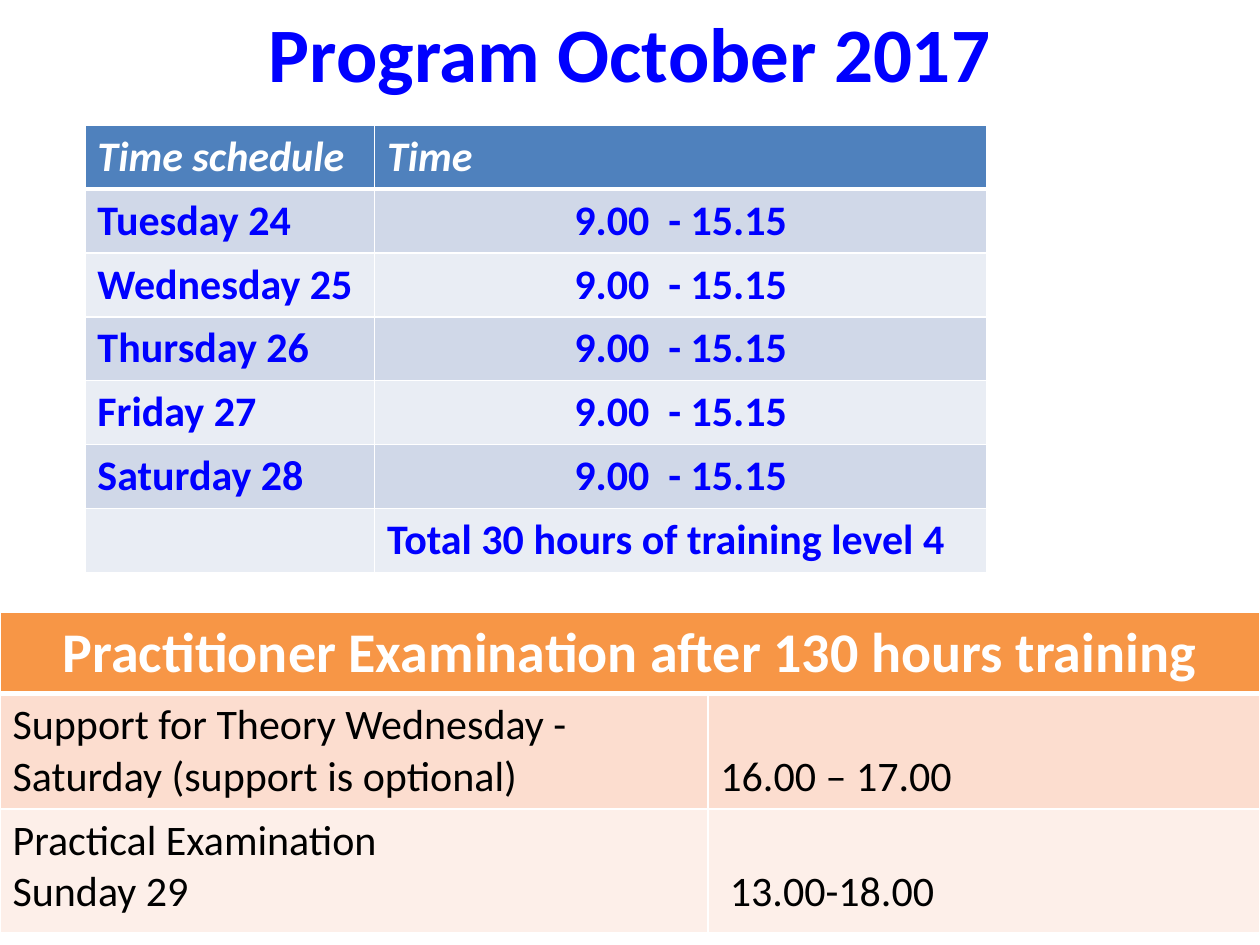
import pptx
import pptx.dml.color
import pptx.enum.text
import pptx.oxml
import pptx.oxml.ns
import pptx.util
from dataclasses import dataclass

Pt = pptx.util.Pt
ALIGN = pptx.enum.text.PP_ALIGN
ANCHOR = pptx.enum.text.MSO_ANCHOR


@dataclass(frozen=True)
class Theme:
    font: str = "Calibri"
    title_size: int = 44
    banner_size: int = 32
    body_size: int = 24
    blue: str = "0000FF"
    white: str = "FFFFFF"
    black: str = "000000"
    schedule_header: str = "4F81BD"
    schedule_bands: tuple = ("D0D8E8", "E9EDF4")
    exam_header: str = "F79646"
    exam_bands: tuple = ("FCDDCF", "FDEFE9")
    grid_width: int = 1
    header_rule: int = 3


THEME = Theme()


def rgb(color):
    return pptx.dml.color.RGBColor.from_string(color)


def write_text(frame, text, size=THEME.body_size, color=THEME.black,
               bold=False, italic=False, align=ALIGN.LEFT):
    """Write text, one paragraph per line, in a single format."""
    frame.text = text
    for paragraph in frame.paragraphs:
        paragraph.alignment = align
        for run in paragraph.runs:
            font = run.font
            font.name, font.size = THEME.font, Pt(size)
            font.bold, font.italic = bold, italic
            font.color.rgb = rgb(color)


def set_borders(cell, top, bottom):
    """Draw white lines on all four sides of a cell."""
    widths = {"L": THEME.grid_width, "R": THEME.grid_width, "T": top, "B": bottom}
    properties = cell._tc.get_or_add_tcPr()
    for side, width in widths.items():
        properties.append(pptx.oxml.parse_xml(
            f'<a:ln{side} {pptx.oxml.ns.nsdecls("a")} w="{Pt(width)}">'
            f'<a:solidFill><a:srgbClr val="{THEME.white}"/></a:solidFill>'
            f'</a:ln{side}>'))


def add_banded_table(slide, left, top, widths, heights, header_color, bands):
    """Add a table with a header row and alternating row fills."""
    table = slide.shapes.add_table(
        len(heights), len(widths), Pt(left), Pt(top),
        Pt(sum(widths)), Pt(sum(heights))).table
    for column, width in zip(table.columns, widths):
        column.width = Pt(width)
    for index, (row, height) in enumerate(zip(table.rows, heights)):
        row.height = Pt(height)
        for cell in row.cells:
            set_borders(cell,
                        top=THEME.header_rule if index == 1 else THEME.grid_width,
                        bottom=THEME.header_rule if index == 0 else THEME.grid_width)
            cell.fill.solid()
            cell.fill.fore_color.rgb = rgb(
                bands[(index - 1) % 2] if index else header_color)
    return table


def add_title(slide, text):
    title = slide.shapes.title
    title.left, title.top, title.width, title.height = Pt(36), Pt(10), Pt(648), Pt(39)
    title.text_frame.vertical_anchor = ANCHOR.MIDDLE
    write_text(title.text_frame, text, size=THEME.title_size,
               color=THEME.blue, bold=True, align=ALIGN.CENTER)


def add_schedule(slide):
    days = ("Tuesday 24", "Wednesday 25", "Thursday 26", "Friday 27", "Saturday 28")
    hours = "9.00  - 15.15"
    table = add_banded_table(slide, 48.5, 71.5, (165.5, 350), (36.5,) * 7,
                             THEME.schedule_header, THEME.schedule_bands)
    for column, heading in enumerate(("Time schedule", "Time")):
        write_text(table.cell(0, column).text_frame, heading,
                   color=THEME.white, bold=True, italic=True)
    for row, day in enumerate(days, start=1):
        write_text(table.cell(row, 0).text_frame, day, color=THEME.blue, bold=True)
        write_text(table.cell(row, 1).text_frame, hours,
                   color=THEME.blue, bold=True, align=ALIGN.CENTER)
    write_text(table.cell(len(days) + 1, 1).text_frame,
               "Total 30 hours of training level 4", color=THEME.blue, bold=True)


def add_examination(slide):
    sessions = (
        ("Support for Theory Wednesday - Saturday (support is optional)",
         "16.00 – 17.00", 3.6),
        ("Practical Examination\nSunday 29", " 13.00-18.00", 8.4),
    )
    table = add_banded_table(slide, 0, 350, (404.5, 315.5), (46, 66, 70.5),
                             THEME.exam_header, THEME.exam_bands)
    banner = table.cell(0, 0)
    banner.merge(table.cell(0, 1))
    write_text(banner.text_frame, "Practitioner Examination after 130 hours training",
               size=THEME.banner_size, color=THEME.white, bold=True,
               align=ALIGN.CENTER)
    for row, (session, hours, bottom_gap) in enumerate(sessions, start=1):
        write_text(table.cell(row, 0).text_frame, session)
        # Hours sit level with the last line of the session
        hours_cell = table.cell(row, 1)
        hours_cell.vertical_anchor = ANCHOR.BOTTOM
        hours_cell.margin_bottom = Pt(bottom_gap)
        write_text(hours_cell.text_frame, hours)


def main():
    presentation = pptx.Presentation()
    presentation.slide_width, presentation.slide_height = Pt(720), Pt(540)
    slide = presentation.slides.add_slide(presentation.slide_layouts[5])
    add_title(slide, "Program October 2017")
    add_schedule(slide)
    add_examination(slide)
    presentation.save("out.pptx")


if __name__ == "__main__":
    main()
